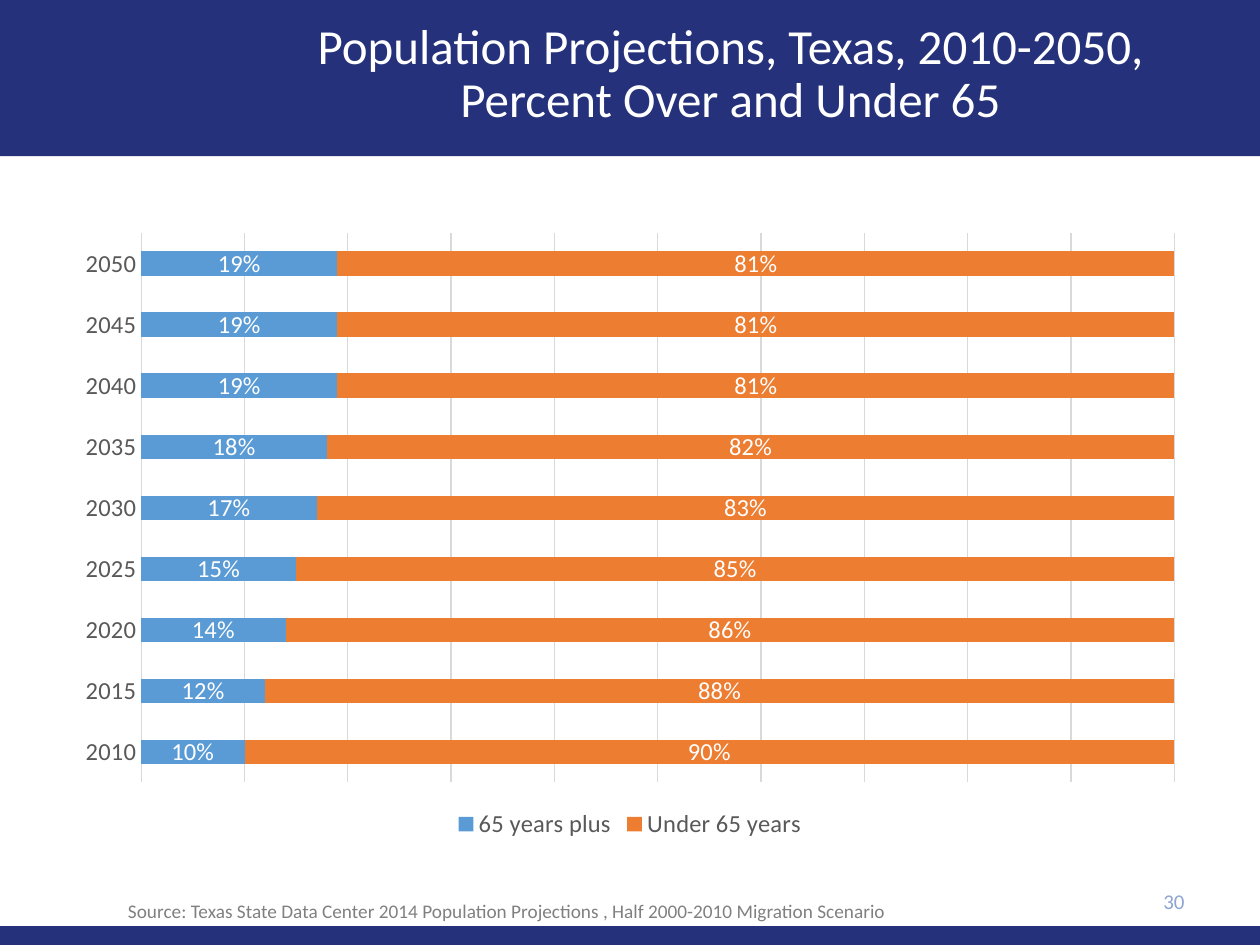
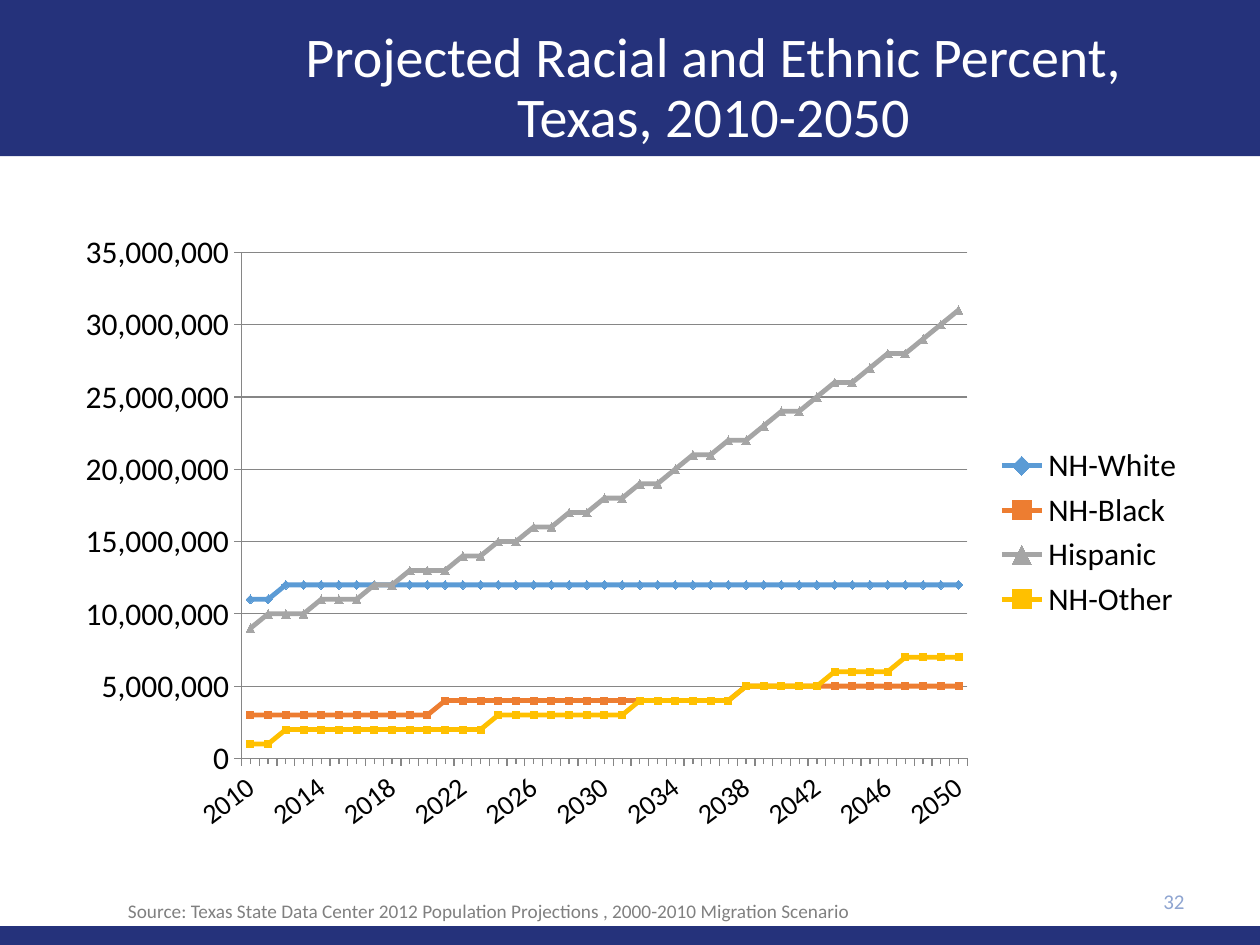
import pptx
import pptx.chart.data
import pptx.dml.color
import pptx.enum.chart
import pptx.enum.shapes
import pptx.enum.text
import pptx.util

Cm = pptx.util.Cm
Pt = pptx.util.Pt
kinds = pptx.enum.chart.XL_CHART_TYPE
marks = pptx.enum.chart.XL_MARKER_STYLE
ticks = pptx.enum.chart.XL_TICK_MARK
sides = pptx.enum.chart.XL_LEGEND_POSITION
aligns = pptx.enum.text.PP_ALIGN
middle = pptx.enum.text.MSO_ANCHOR.MIDDLE

NAVY, WHITE, BLACK = "25327B", "FFFFFF", "000000"
PALE, GRAY = "8FA5D1", "808080"
DARK, LIGHT, RULE = "595959", "D9D9D9", "868686"
BLUE, ORANGE, SILVER, GOLD = "5B9BD5", "ED7D31", "A5A5A5", "FFC000"

AGES = {
    "65 years plus": (BLUE, [0.19, 0.19, 0.19, 0.18, 0.17, 0.15, 0.14, 0.12, 0.1]),
    "Under 65 years": (ORANGE, [0.81, 0.81, 0.81, 0.82, 0.83, 0.85, 0.86, 0.88, 0.9]),
}

# Millions of people, one value a year from 2010 to 2050
GROUPS = {
    "NH-White": (BLUE, marks.DIAMOND, 5, [11] * 2 + [12] * 39),
    "NH-Black": (ORANGE, marks.SQUARE, 4, [3] * 11 + [4] * 17 + [5] * 13),
    "Hispanic": (SILVER, marks.TRIANGLE, 5, [
        9, 10, 10, 10, 11, 11, 11, 12, 12, 13,
        13, 13, 14, 14, 15, 15, 16, 16, 17, 17,
        18, 18, 19, 19, 20, 21, 21, 22, 22, 23,
        24, 24, 25, 26, 26, 27, 28, 28, 29, 30, 31]),
    "NH-Other": (GOLD, marks.SQUARE, 4,
                 [1] * 2 + [2] * 12 + [3] * 8 + [4] * 6 + [5] * 5 + [6] * 4 + [7] * 4),
}


def color(code):
    return pptx.dml.color.RGBColor.from_string(code)


def paint(fill, code):
    fill.solid()
    fill.fore_color.rgb = color(code)


def stroke(line, code, width=0.75):
    paint(line.fill, code)
    line.width = Pt(width)


def style(font, size, code):
    font.name = "Calibri"
    font.size = Pt(size)
    font.bold = False
    font.color.rgb = color(code)


def tilt(axis, angle):
    """Turn the axis labels by an angle in degrees."""
    body = axis.format.line and axis.tick_labels.font and axis
    for node in body.tick_labels.font and chart_body(axis):
        node.set("rot", str(angle * 60000))


def chart_body(axis):
    return axis._element.xpath("c:txPr/a:bodyPr")


def write(frame, text, size=12, code=BLACK, align=aligns.LEFT, anchor=None, lead=None):
    frame.word_wrap = True
    frame.auto_size = pptx.enum.text.MSO_AUTO_SIZE.NONE
    frame.vertical_anchor = anchor
    para = frame.paragraphs[0]
    para.alignment = align
    para.line_spacing = lead
    for row, part in enumerate(text.split("\n")):
        if row:
            para.add_line_break()
        run = para.add_run()
        run.text = part
        style(run.font, size, code)


class Deck:
    def __init__(self):
        self.show = pptx.Presentation()
        self.show.slide_width = Cm(25.4)
        self.show.slide_height = Cm(19.05)
        self.slide = None

    def start(self, title, box, size):
        first = self.slide is None
        self.slide = self.show.slides.add_slide(self.show.slide_layouts[5])
        if first:
            self.band(0, 3.15)
            self.band(18.67, 0.38)
        head = self.slide.shapes.title
        head.left, head.top, head.width, head.height = map(Cm, box)
        write(head.text_frame, title, size=size, code=WHITE,
              align=aligns.CENTER, anchor=middle, lead=0.9)

    def band(self, top, height):
        """Draw a full-width band and move it to the master, behind all else."""
        bar = self.slide.shapes.add_shape(
            pptx.enum.shapes.MSO_SHAPE.RECTANGLE, 0, Cm(top), Cm(25.4), Cm(height))
        bar.shadow.inherit = False
        paint(bar.fill, NAVY)
        bar.line.fill.background()
        self.show.slide_master.shapes.element.insert(2, bar.element)

    def label(self, text, box, **look):
        shape = self.slide.shapes.add_textbox(*map(Cm, box))
        write(shape.text_frame, text, **look)

    def foot(self, source, number):
        self.label(number, (18.21, 17.65, 5.92, 1.02), code=PALE,
                   align=aligns.RIGHT, anchor=middle)
        self.label(source, (2.33, 18, 24.33, 0.74), size=11, code=GRAY)

    def chart(self, kind, data, size, side, code):
        frame = self.slide.shapes.add_chart(
            kind, Cm(1.27), Cm(4.45), Cm(22.86), Cm(12.57), data)
        chart = frame.chart
        chart.has_title = False
        style(chart.font, size, BLACK)
        chart.has_legend = True
        chart.legend.position = side
        chart.legend.include_in_layout = False
        style(chart.legend.font, size, code)
        chart.plots[0].vary_by_categories = False
        chart.value_axis.has_major_gridlines = True
        return chart

    def bars(self, years, groups):
        data = pptx.chart.data.CategoryChartData(number_format="0%")
        data.categories = years
        for name, (_, vals) in groups.items():
            data.add_series(name, vals)
        chart = self.chart(kinds.BAR_STACKED_100, data, 14, sides.BOTTOM, DARK)
        plot = chart.plots[0]
        plot.gap_width, plot.overlap = 150, 100
        axis = chart.category_axis
        axis.reverse_order = True
        axis.major_tick_mark = ticks.NONE
        style(axis.tick_labels.font, 14, DARK)
        stroke(axis.format.line, LIGHT)
        chart.value_axis.visible = False
        stroke(chart.value_axis.major_gridlines.format.line, LIGHT)
        for series, (code, _) in zip(plot.series, groups.values()):
            paint(series.format.fill, code)
            tags = series.data_labels
            tags.show_value = True
            tags.number_format = "0%"
            tags.number_format_is_linked = False
            style(tags.font, 14, WHITE)

    def lines(self, years, groups):
        data = pptx.chart.data.CategoryChartData(number_format="#,##0")
        data.categories = years
        for name, (*_, vals) in groups.items():
            data.add_series(name, [val * 1_000_000 for val in vals])
        chart = self.chart(kinds.LINE_MARKERS, data, 18, sides.RIGHT, BLACK)
        for axis, size in ((chart.category_axis, 16), (chart.value_axis, 18)):
            axis.major_tick_mark = ticks.OUTSIDE
            style(axis.tick_labels.font, size, BLACK)
            stroke(axis.format.line, RULE)
        chart.category_axis.minor_tick_mark = ticks.OUTSIDE
        tilt(chart.category_axis, -37)
        scale = chart.value_axis
        scale.minimum_scale, scale.maximum_scale = 0, 35_000_000
        scale.major_unit = 5_000_000
        scale.tick_labels.number_format = "#,##0"
        scale.tick_labels.number_format_is_linked = False
        stroke(scale.major_gridlines.format.line, RULE)
        for series, (code, mark, size, _) in zip(chart.plots[0].series, groups.values()):
            series.smooth = False
            stroke(series.format.line, code, 2.75)
            series.marker.style = mark
            series.marker.size = size
            paint(series.marker.format.fill, code)
            stroke(series.marker.format.line, code)


def main():
    deck = Deck()

    deck.start("Population Projections, Texas, 2010-2050,\nPercent Over and Under 65",
               (4.31, 0.25, 20.83, 2.54), 28)
    deck.bars([str(year) for year in range(2050, 2009, -5)], AGES)
    deck.foot("Source: Texas State Data Center 2014 Population Projections , "
              "Half 2000-2010 Migration Scenario", "30")

    deck.start("Projected Racial and Ethnic Percent, Texas, 2010-2050",
               (4.44, 0.43, 19.89, 2.74), 32)
    deck.lines([str(year) for year in range(2010, 2051)], GROUPS)
    deck.foot("Source: Texas State Data Center 2012 Population Projections , "
              "2000-2010 Migration Scenario", "32")

    deck.show.save("out.pptx")


if __name__ == "__main__":
    main()
